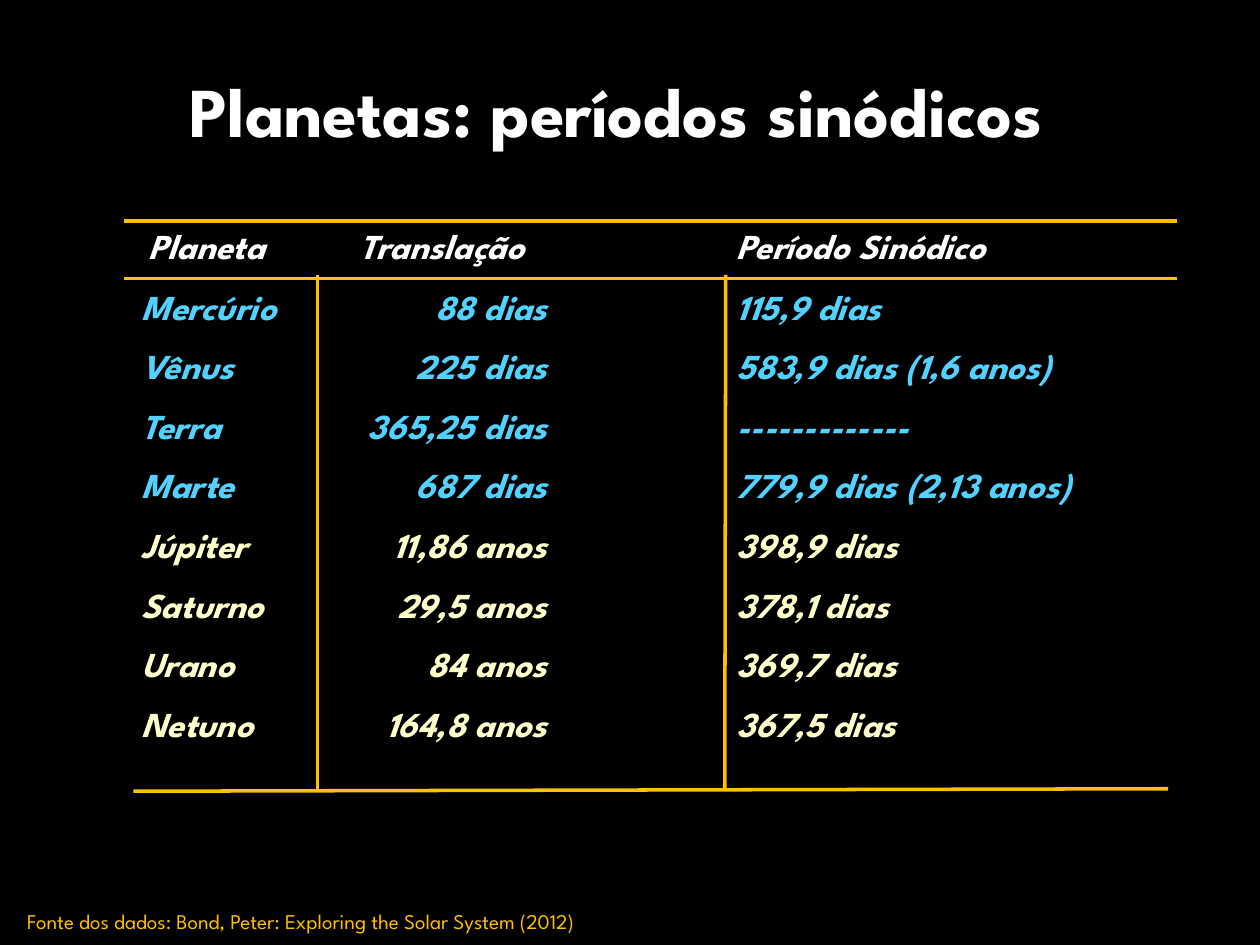
from pptx import Presentation
from pptx.dml.color import RGBColor as RGB
from pptx.enum.text import MSO_ANCHOR as Anchor, PP_ALIGN as Align
from pptx.oxml.ns import qn
from pptx.util import Cm, Pt
from lxml.etree import SubElement

BLACK = RGB(0x00, 0x00, 0x00)
WHITE = RGB(0xFF, 0xFF, 0xFF)
GOLD = RGB(0xFF, 0xC0, 0x00)
BLUE = RGB(0x53, 0xD2, 0xFF)
CREAM = RGB(0xFF, 0xFF, 0xCC)
FONT = "League Spartan"
NO_GRID = "{2D5ABB26-0587-4C30-8999-92F81FD0307C}"

HEAD = ("Planeta", "Translação", "Período Sinódico")
INNER = [
    ("Mercúrio", "88 dias", "115,9 dias"),
    ("Vênus", "225 dias", "583,9 dias (1,6 anos)"),
    ("Terra", "365,25 dias", "-------------"),
    ("Marte", "687 dias", "779,9 dias (2,13 anos)"),
]
OUTER = [
    ("Júpiter", "11,86 anos", "398,9 dias"),
    ("Saturno", "29,5 anos", "378,1 dias"),
    ("Urano", "84 anos", "369,7 dias"),
    ("Netuno", "164,8 anos", "367,5 dias"),
]
LEFT, TOP = 2.49, 4.45
WIDTHS = (3.91, 8.2, 9.12)
HEAD_H, ROW_H = 1.24, 1.2
HEAD_PADS = (0.5, 0.85, 0.25)
PADS = (0.36, 0, 0.25)
RULES = [
    (6.4, 5.54, 6.4, 15.9),
    (2.69, 15.95, 23.55, 15.9),
    (14.63, 5.54, 14.61, 15.93),
    (2.49, 4.45, 23.72, 4.45),
    (2.49, 5.61, 23.72, 5.61),
]


def put_text(frame, text, size=20, color=WHITE, bold=False, italic=False,
             align=Align.LEFT):
    para = frame.paragraphs[0]
    para.alignment = align
    run = para.add_run()
    run.text = text
    font = run.font
    font.name, font.size = FONT, Pt(size)
    font.bold, font.italic = bold, italic
    font.color.rgb = color


def add_label(slide, box, text, **fmt):
    frame = slide.shapes.add_textbox(*map(Cm, box)).text_frame
    frame.word_wrap = True
    frame.vertical_anchor = Anchor.MIDDLE
    put_text(frame, text, **fmt)


def add_rule(slide, ends):
    line = slide.shapes.add_connector(1, *map(Cm, ends))
    line.line.color.rgb = GOLD
    line.line.width = Pt(2)
    SubElement(line._element.spPr, qn("a:effectLst"))


def fill_row(cells, texts, pads, color, mid):
    """Write one row; mid is the alignment of its middle column."""
    aligns = (Align.LEFT, mid, Align.LEFT)
    for cell, text, pad, align in zip(cells, texts, pads, aligns):
        cell.fill.background()
        cell.vertical_anchor = Anchor.MIDDLE
        cell.margin_left = Cm(pad)
        cell.margin_right = Cm(3.57 if align == Align.RIGHT else 0)
        cell.margin_top = cell.margin_bottom = 0
        put_text(cell.text_frame, text, color=color, bold=True,
                 italic=True, align=align)


def add_periods(slide):
    data = INNER + OUTER
    box = (LEFT, TOP, sum(WIDTHS), HEAD_H + ROW_H * len(data))
    table = slide.shapes.add_table(len(data) + 1, 3, *map(Cm, box)).table
    table._tbl.tblPr.find(qn("a:tableStyleId")).text = NO_GRID
    table.horz_banding = False
    for col, width in zip(table.columns, WIDTHS):
        col.width = Cm(width)
    head, *rows = table.rows
    head.height = Cm(HEAD_H)
    fill_row(head.cells, HEAD, HEAD_PADS, WHITE, Align.LEFT)
    for row, texts in zip(rows, data):
        row.height = Cm(ROW_H)
        color = BLUE if texts in INNER else CREAM
        fill_row(row.cells, texts, PADS, color, Align.RIGHT)


def main():
    deck = Presentation()
    deck.slide_width, deck.slide_height = Cm(25.4), Cm(19.05)
    slide = deck.slides.add_slide(deck.slide_layouts[6])
    back = slide.background.fill
    back.solid()
    back.fore_color.rgb = BLACK

    add_periods(slide)
    add_label(slide, (0.99, 0.91, 22.86, 2.59),
              "Planetas: períodos sinódicos", size=40, bold=True,
              align=Align.CENTER)
    for ends in RULES:
        add_rule(slide, ends)
    add_label(slide, (0.3, 18.19, 18.16, 0.76),
              "Fonte dos dados: Bond, Peter: Exploring the Solar System (2012)",
              size=12, color=GOLD)
    deck.save("out.pptx")


if __name__ == "__main__":
    main()
